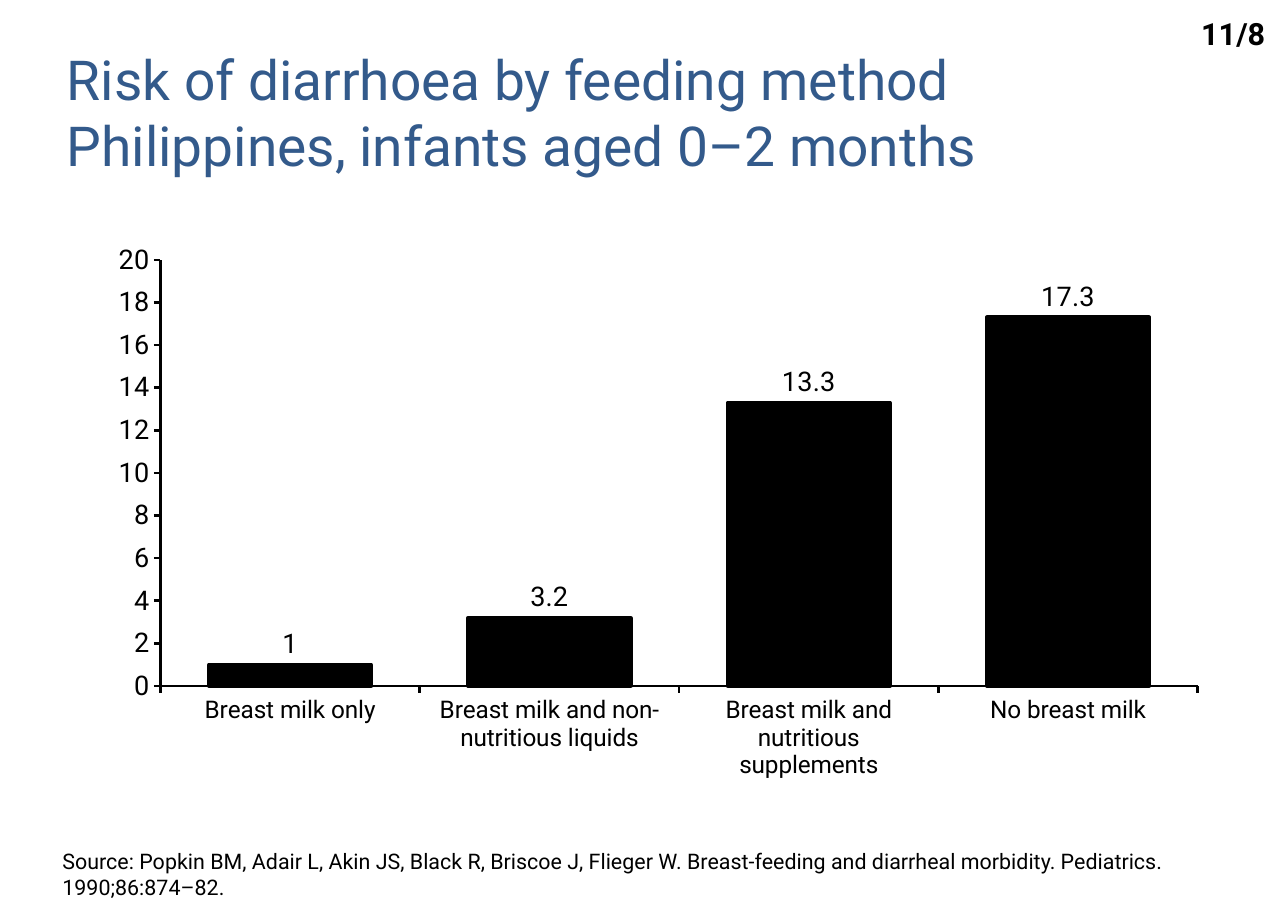
from lxml import etree
from pptx import Presentation
from pptx.chart.data import CategoryChartData
from pptx.dml.color import RGBColor
from pptx.enum.chart import XL_CHART_TYPE, XL_LABEL_POSITION, XL_TICK_MARK
from pptx.enum.text import MSO_ANCHOR, MSO_AUTO_SIZE, PP_ALIGN
from pptx.oxml.ns import qn
from pptx.util import Cm, Pt

COLUMN = XL_CHART_TYPE.COLUMN_CLUSTERED
ABOVE = XL_LABEL_POSITION.OUTSIDE_END
TICK_OUT, TICK_NONE = XL_TICK_MARK.OUTSIDE, XL_TICK_MARK.NONE
TOP, MIDDLE = MSO_ANCHOR.TOP, MSO_ANCHOR.MIDDLE
LEFT, RIGHT = PP_ALIGN.LEFT, PP_ALIGN.RIGHT
FIXED = MSO_AUTO_SIZE.NONE
FACE = "Roboto"
COLORS = {"title": "335A8B", "ink": "000000"}
INK = RGBColor.from_string(COLORS["ink"])


def set_font(font, size, color="ink", bold=False):
    look = {"name": FACE, "size": Pt(size), "bold": bold}
    for key, value in look.items():
        setattr(font, key, value)
    font.color.rgb = RGBColor.from_string(COLORS[color])


def set_text(box, text, size, color="ink", bold=False, align=LEFT, anchor=TOP):
    frame = box.text_frame
    frame.text = text
    look = {"word_wrap": True, "auto_size": FIXED, "vertical_anchor": anchor,
            "margin_left": Cm(0.27), "margin_right": Cm(0.27),
            "margin_top": Cm(0.14), "margin_bottom": Cm(0.14)}
    for key, value in look.items():
        setattr(frame, key, value)
    for para in frame.paragraphs:
        para.alignment = align
        for run in para.runs:
            set_font(run.font, size, color, bold)


deck = Presentation()
deck.slide_width, deck.slide_height = Cm(29.7), Cm(21)
slide = deck.slides.add_slide(deck.slide_layouts[5])

# Title
title = slide.shapes.title
place = {"left": 1.27, "top": 0.81, "width": 26.7, "height": 3.5}
for key, value in place.items():
    setattr(title, key, Cm(value))
set_text(title, "Risk of diarrhoea by feeding method\v"
         "Philippines, infants aged 0–2 months", 36, "title", anchor=MIDDLE)

# Page number
page = slide.shapes.add_textbox(Cm(27.21), Cm(0.2), Cm(2.24), Cm(1.14))
set_text(page, "11/8", 20, bold=True, align=RIGHT)

# Risk chart
data = CategoryChartData()
data.categories = ["Breast milk only", "Breast milk and non-nutritious liquids",
                   "Breast milk and nutritious supplements", "No breast milk"]
data.add_series("Series 1", [1, 3.2, 13.3, 17.3])
chart = slide.shapes.add_chart(
    COLUMN, Cm(1.88), Cm(4.98), Cm(26), Cm(14.45), data).chart
chart.has_legend = chart.has_title = False
set_font(chart.font, 15.9)

# Axes
risk, method = chart.value_axis, chart.category_axis
for axis, size in ((risk, 17.7), (method, 15.9)):
    axis.has_major_gridlines = False
    axis.major_tick_mark = TICK_OUT
    axis.minor_tick_mark = TICK_NONE
    axis.format.line.color.rgb = INK
    axis.format.line.width = Pt(1.77)
    set_font(axis.tick_labels.font, size)
scale = {"minimum_scale": 0, "maximum_scale": 20, "major_unit": 2}
for key, value in scale.items():
    setattr(risk, key, value)

# Level category labels that wrap
body = chart.element.find(".//" + qn("c:catAx")).find(".//" + qn("a:bodyPr"))
body.set("rot", "0")
body.set("vert", "horz")

# Bars and their values
plot = chart.plots[0]
plot.gap_width = 60
plot.vary_by_categories = False
bars = plot.series[0]
bars.format.fill.solid()
bars.format.fill.fore_color.rgb = INK
bars.format.line.color.rgb = INK
bars.format.line.width = Pt(2.66)
labels = bars.data_labels
labels.show_value = True
labels.position = ABOVE
set_font(labels.font, 17.7)

# Inner plot area
area = chart.element.chart.plotArea
for old in area.findall(qn("c:layout")):
    area.remove(old)
layout = etree.Element(qn("c:layout"))
area.insert(0, layout)
manual = etree.SubElement(layout, qn("c:manualLayout"))
frame = {"layoutTarget": "inner", "xMode": "edge", "yMode": "edge",
         "x": 0.07, "y": 0.07, "w": 0.92, "h": 0.68}
for key, value in frame.items():
    etree.SubElement(manual, qn("c:" + key)).set("val", str(value))

# Source
source = slide.shapes.add_textbox(Cm(1.17), Cm(19.41), Cm(28.07), Cm(1.4))
set_text(source, "Source: Popkin BM, Adair L, Akin JS, Black R, Briscoe J, "
         "Flieger W. Breast-feeding and diarrheal morbidity. Pediatrics. "
         "1990;86:874–82.", 14)

deck.save("out.pptx")
